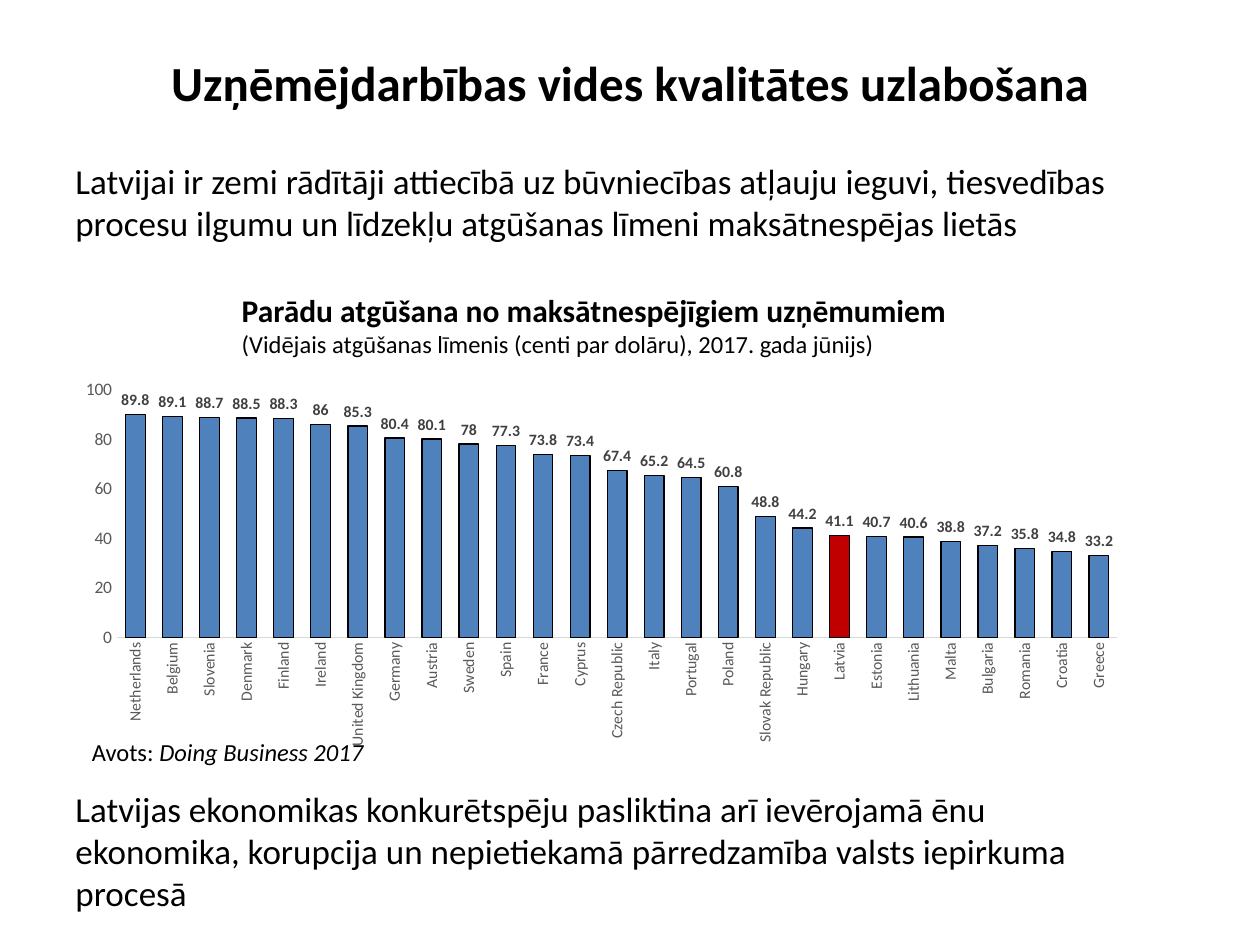
from lxml import etree
from pptx import Presentation
from pptx.chart.data import CategoryChartData
from pptx.dml.color import RGBColor
from pptx.enum.chart import XL_CHART_TYPE, XL_LABEL_POSITION, XL_TICK_MARK
from pptx.enum.text import MSO_ANCHOR, MSO_AUTO_SIZE, PP_ALIGN
from pptx.oxml.ns import qn
from pptx.util import Inches, Pt

COLUMNS = XL_CHART_TYPE.COLUMN_CLUSTERED
OUTSIDE_END = XL_LABEL_POSITION.OUTSIDE_END
NO_TICK = XL_TICK_MARK.NONE
TOP, MIDDLE = MSO_ANCHOR.TOP, MSO_ANCHOR.MIDDLE
NO_AUTOFIT = MSO_AUTO_SIZE.NONE
LEFT, CENTER = PP_ALIGN.LEFT, PP_ALIGN.CENTER

BLACK = RGBColor(0x00, 0x00, 0x00)
BLUE = RGBColor(0x4F, 0x81, 0xBD)
RED = RGBColor(0xC0, 0x00, 0x00)
LABEL_GRAY = RGBColor(0x40, 0x40, 0x40)
AXIS_GRAY = RGBColor(0x59, 0x59, 0x59)
LINE_GRAY = RGBColor(0xD9, 0xD9, 0xD9)

HIGHLIGHT = "Latvia"
RECOVERY = {
    "Netherlands": 89.8, "Belgium": 89.1, "Slovenia": 88.7, "Denmark": 88.5,
    "Finland": 88.3, "Ireland": 86, "United Kingdom": 85.3, "Germany": 80.4,
    "Austria": 80.1, "Sweden": 78, "Spain": 77.3, "France": 73.8,
    "Cyprus": 73.4, "Czech Republic": 67.4, "Italy": 65.2, "Portugal": 64.5,
    "Poland": 60.8, "Slovak Republic": 48.8, "Hungary": 44.2, "Latvia": 41.1,
    "Estonia": 40.7, "Lithuania": 40.6, "Malta": 38.8, "Bulgaria": 37.2,
    "Romania": 35.8, "Croatia": 34.8, "Greece": 33.2,
}
PLOT_LAYOUT = {"x": 0.05, "y": 0.05, "w": 0.93, "h": 0.65}


class SlideBuilder:
    """Holds the text style and the slide being filled."""

    font_name = "Calibri"

    def __init__(self, slide):
        self.slide = slide

    def style_font(self, font, size, color=BLACK, **format_values):
        values = {"name": self.font_name, "size": Pt(size), **format_values}
        for name, value in values.items():
            setattr(font, name, value)
        font.color.rgb = color

    def add_text(self, box, paragraphs, wrap=True, anchor=TOP, align=LEFT):
        """Each paragraph is a list of (text, size, format values) runs."""
        shape = self.slide.shapes.add_textbox(*map(Inches, box))
        frame = shape.text_frame
        frame_format = {"word_wrap": wrap, "auto_size": NO_AUTOFIT,
                        "vertical_anchor": anchor}
        for name, value in frame_format.items():
            setattr(frame, name, value)
        for index, runs in enumerate(paragraphs):
            paragraph = frame.add_paragraph() if index else frame.paragraphs[0]
            paragraph.alignment = align
            for text, size, format_values in runs:
                run = paragraph.add_run()
                run.text = text
                self.style_font(run.font, size, **format_values)

    def add_column_chart(self, box, values, highlight):
        data = CategoryChartData()
        data.categories = list(values)
        data.add_series("Series 1", list(values.values()))
        chart = self.slide.shapes.add_chart(
            COLUMNS, *map(Inches, box), data).chart
        chart.has_title = False
        chart.has_legend = False
        self.style_font(chart.font, 10)
        self.style_axes(chart)
        self.style_columns(chart.plots[0], list(values).index(highlight))
        self.place_plot(chart)

    def style_axes(self, chart):
        for axis, size in ((chart.category_axis, 9), (chart.value_axis, 10)):
            axis.major_tick_mark = axis.minor_tick_mark = NO_TICK
            axis.has_major_gridlines = False
            self.style_font(axis.tick_labels.font, size, AXIS_GRAY)
        category_line = chart.category_axis.format.line
        category_line.color.rgb = LINE_GRAY
        category_line.width = Pt(0.75)
        text_body = chart.category_axis._element.find(qn("c:txPr"))
        text_body.find(qn("a:bodyPr")).set("rot", "-5400000")
        scale = {"minimum_scale": 0, "maximum_scale": 100, "major_unit": 20}
        for name, value in scale.items():
            setattr(chart.value_axis, name, value)
        chart.value_axis.format.line.fill.background()

    def style_columns(self, plot, highlight_index):
        plot.gap_width = 89
        plot.overlap = -27
        plot.vary_by_categories = False
        series = plot.series[0]
        series.invert_if_negative = False
        point = series.points[highlight_index]
        for column, color in ((series, BLUE), (point, RED)):
            column.format.fill.solid()
            column.format.fill.fore_color.rgb = color
            column.format.line.color.rgb = BLACK
            column.format.line.width = Pt(0.75)
        labels = series.data_labels
        labels.show_value = True
        labels.position = OUTSIDE_END
        self.style_font(labels.font, 9, LABEL_GRAY, bold=True)

    def place_plot(self, chart):
        """Fix the inner plot area as fractions of the chart."""
        plot_area = chart._chartSpace.chart.plotArea
        layout = plot_area.find(qn("c:layout"))
        if layout is None:
            layout = etree.Element(qn("c:layout"))
            plot_area.insert(0, layout)
        manual = etree.SubElement(layout, qn("c:manualLayout"))
        settings = {"layoutTarget": "inner", "xMode": "edge", "yMode": "edge",
                    **PLOT_LAYOUT}
        for name, value in settings.items():
            etree.SubElement(manual, qn(f"c:{name}")).set("val", str(value))


def main():
    presentation = Presentation()
    presentation.slide_width = Inches(10)
    presentation.slide_height = Inches(7.5)
    slide = presentation.slides.add_slide(presentation.slide_layouts[6])
    builder = SlideBuilder(slide)

    builder.add_text(
        (0.5, 0.3, 9, 0.7),
        [[("Uzņēmējdarbības vides kvalitātes uzlabošana", 28, {"bold": True})]],
        anchor=MIDDLE, align=CENTER)
    builder.add_text(
        (0.5, 1.22, 9, 5.13),
        [[("Latvijai ir zemi rādītāji attiecībā uz būvniecības atļauju ieguvi, "
           "tiesvedības procesu ilgumu un līdzekļu atgūšanas līmeni "
           "maksātnespējas lietās", 20, {})]])
    builder.add_text(
        (1.82, 2.26, 5.84, 0.64),
        [[("Parādu atgūšana no maksātnespējīgiem uzņēmumiem", 18,
           {"bold": True})],
         [("(Vidējais atgūšanas līmenis (centi par dolāru), "
           "2017. gada jūnijs)", 14, {})]],
        wrap=False)
    builder.add_text(
        (0.5, 6.2, 8.79, 1.11),
        [[("Latvijas ekonomikas konkurētspēju pasliktina arī ievērojamā ēnu "
           "ekonomika, korupcija un nepietiekamā pārredzamība valsts "
           "iepirkuma procesā", 20, {})]])
    builder.add_text(
        (0.63, 5.8, 2.39, 0.34),
        [[("Avots: ", 14, {}), ("Doing Business 2017", 14, {"italic": True})]],
        wrap=False)
    builder.add_column_chart((0.5, 2.94, 8.54, 3.03), RECOVERY, HIGHLIGHT)

    presentation.save("out.pptx")


if __name__ == "__main__":
    main()
